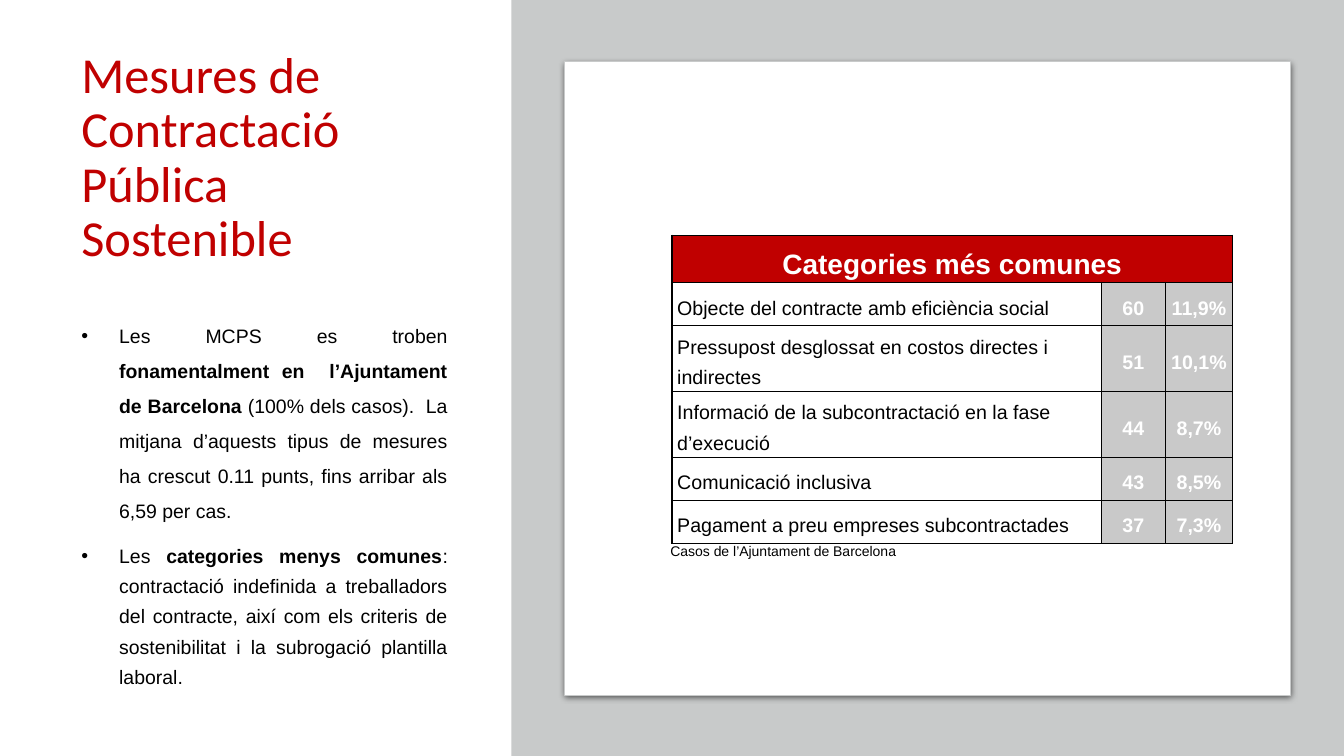
from dataclasses import dataclass

from lxml.etree import SubElement
from pptx import Presentation
from pptx.dml.color import RGBColor
from pptx.enum.shapes import MSO_SHAPE as Shape
from pptx.enum.text import MSO_ANCHOR as Anchor, PP_ALIGN as Align
from pptx.oxml.ns import qn
from pptx.util import Pt

PX = 9525  # EMU per pixel, 96 px to the inch


@dataclass(frozen=True)
class Theme:
    red: str = "C00000"
    black: str = "000000"
    white: str = "FFFFFF"
    panel: str = "C8CACA"
    figure_cell: str = "C9C9C9"
    title_font: str = "Calibri"
    body_font: str = "Arial"
    title_size: float = 36
    header_size: float = 20
    cell_size: float = 14
    body_size: float = 13.9
    caption_size: float = 10


THEME = Theme()

POINTS = [
    (1.5, 0, [
        ("Les MCPS es troben ", False),
        ("fonamentalment en  l’Ajuntament de Barcelona", True),
        (" (100% dels casos).  La mitjana d’aquests tipus de mesures ha "
         "crescut 0.11 punts, fins arribar als 6,59 per cas.", False),
    ]),
    (1.3, 10, [
        ("Les", False),
        (" categories menys comunes", True),
        (": contractació indefinida a treballadors del contracte, així com "
         "els criteris de sostenibilitat i la subrogació plantilla laboral.", False),
    ]),
]

CATEGORIES = [
    ("Objecte del contracte amb eficiència social", "60", "11,9%"),
    ("Pressupost desglossat en costos directes i indirectes", "51", "10,1%"),
    ("Informació de la subcontractació en la fase d’execució", "44", "8,7%"),
    ("Comunicació inclusiva", "43", "8,5%"),
    ("Pagament a preu empreses subcontractades", "37", "7,3%"),
]
COLUMN_WIDTHS = (409, 61, 64)
ROW_HEIGHT = 41
CELL_LINE_SPACING = 1.4  # keeps the two-line rows clear of the caption


def box(*lengths):
    return [length * PX for length in lengths]


def add_run(paragraph, text, size, color=THEME.black, bold=False,
            font=THEME.body_font):
    run = paragraph.add_run()
    run.text = text
    run.font.name = font
    run.font.size = Pt(size)
    run.font.bold = bold
    run.font.color.rgb = RGBColor.from_string(color)


def add_text_frame(slide, *bounds):
    frame = slide.shapes.add_textbox(*box(*bounds)).text_frame
    frame.word_wrap = True
    return frame


def add_panel(slide, kind, bounds, color):
    panel = slide.shapes.add_shape(kind, *box(*bounds))
    panel.shadow.inherit = False
    panel.fill.solid()
    panel.fill.fore_color.rgb = RGBColor.from_string(color)
    panel.line.fill.background()
    return panel


def add_card(slide, bounds):
    card = add_panel(slide, Shape.ROUNDED_RECTANGLE, bounds, THEME.white)
    card.adjustments[0] = 0
    card.line.color.rgb = RGBColor.from_string(THEME.panel)
    card.line.width = Pt(0.75)
    effects = card.element.spPr.find(qn("a:effectLst"))
    shadow = SubElement(effects, qn("a:outerShdw"), blurRad=str(Pt(4.5)),
                        dist=str(Pt(1.5)), dir="5400000", rotWithShape="0")
    tone = SubElement(shadow, qn("a:srgbClr"), val=THEME.black)
    SubElement(tone, qn("a:alpha"), val="63000")


def set_bullet(paragraph, indent):
    props = paragraph._p.get_or_add_pPr()
    props.set("marL", str(indent * PX))
    props.set("indent", str(-indent * PX))
    SubElement(props, qn("a:buFont"), typeface=THEME.body_font)
    SubElement(props, qn("a:buChar"), char="•")


def add_points(slide):
    frame = add_text_frame(slide, 68, 256, 368, 397)
    frame.margin_top = 42 * PX
    for number, (spacing, before, runs) in enumerate(POINTS):
        point = frame.add_paragraph() if number else frame.paragraphs[0]
        point.alignment = Align.JUSTIFY
        point.line_spacing = spacing
        point.space_before = Pt(before)
        set_bullet(point, 36)
        for text, bold in runs:
            add_run(point, text, THEME.body_size, bold=bold)


def set_borders(cell):
    props = cell._tc.get_or_add_tcPr()
    for side in ("a:lnL", "a:lnR", "a:lnT", "a:lnB"):
        border = SubElement(props, qn(side), w=str(Pt(1)))
        fill = SubElement(border, qn("a:solidFill"))
        SubElement(fill, qn("a:srgbClr"), val=THEME.black)


def style_cell(cell, fill):
    set_borders(cell)
    if fill:
        cell.fill.solid()
        cell.fill.fore_color.rgb = RGBColor.from_string(fill)
    else:
        cell.fill.background()
    cell.vertical_anchor = Anchor.MIDDLE
    cell.margin_left = cell.margin_right = 5 * PX
    cell.margin_top = cell.margin_bottom = 0


def fill_cell(cell, text, size, color, bold, align):
    paragraph = cell.text_frame.paragraphs[0]
    paragraph.alignment = align
    paragraph.line_spacing = CELL_LINE_SPACING
    paragraph.space_after = Pt(8)
    add_run(paragraph, text, size, color, bold)


def add_categories(slide, left, top):
    row_count = len(CATEGORIES) + 1
    bounds = box(left, top, sum(COLUMN_WIDTHS), ROW_HEIGHT * row_count)
    table = slide.shapes.add_table(row_count, len(COLUMN_WIDTHS), *bounds).table
    table.first_row = table.horz_banding = False
    for column, width in zip(table.columns, COLUMN_WIDTHS):
        column.width = width * PX

    # Header across all columns
    for column in range(len(COLUMN_WIDTHS)):
        style_cell(table.cell(0, column), THEME.red)
    header = table.cell(0, 0)
    header.merge(table.cell(0, len(COLUMN_WIDTHS) - 1))
    fill_cell(header, "Categories més comunes", THEME.header_size,
              THEME.white, True, Align.CENTER)

    # One category per row: label, cases, share
    for row, category in enumerate(CATEGORIES, 1):
        for column, text in enumerate(category):
            cell = table.cell(row, column)
            is_figure = column > 0
            style_cell(cell, THEME.figure_cell if is_figure else None)
            fill_cell(cell, text, THEME.cell_size,
                      THEME.white if is_figure else THEME.black, is_figure,
                      Align.CENTER if is_figure else Align.LEFT)


def main():
    deck = Presentation()
    deck.slide_width, deck.slide_height = box(1280, 720)
    slide = deck.slides.add_slide(deck.slide_layouts[6])

    # Left side: title and findings
    title_frame = add_text_frame(slide, 68, 66, 368, 170)
    title_frame.vertical_anchor = Anchor.MIDDLE
    title = title_frame.paragraphs[0]
    title.line_spacing = 0.9
    add_run(title, "Mesures de Contractació Pública Sostenible",
            THEME.title_size, THEME.red, font=THEME.title_font)
    add_points(slide)

    # Right side: panel, card, table and caption
    add_panel(slide, Shape.RECTANGLE, (487, 0, 793, 720), THEME.panel)
    add_card(slide, (538, 59, 691, 603))
    add_categories(slide, 640, 224)
    caption = add_text_frame(slide, 629, 512, 612, 26).paragraphs[0]
    caption.alignment = Align.JUSTIFY
    add_run(caption, "Casos de l’Ajuntament de Barcelona", THEME.caption_size)

    deck.save("out.pptx")


if __name__ == "__main__":
    main()
